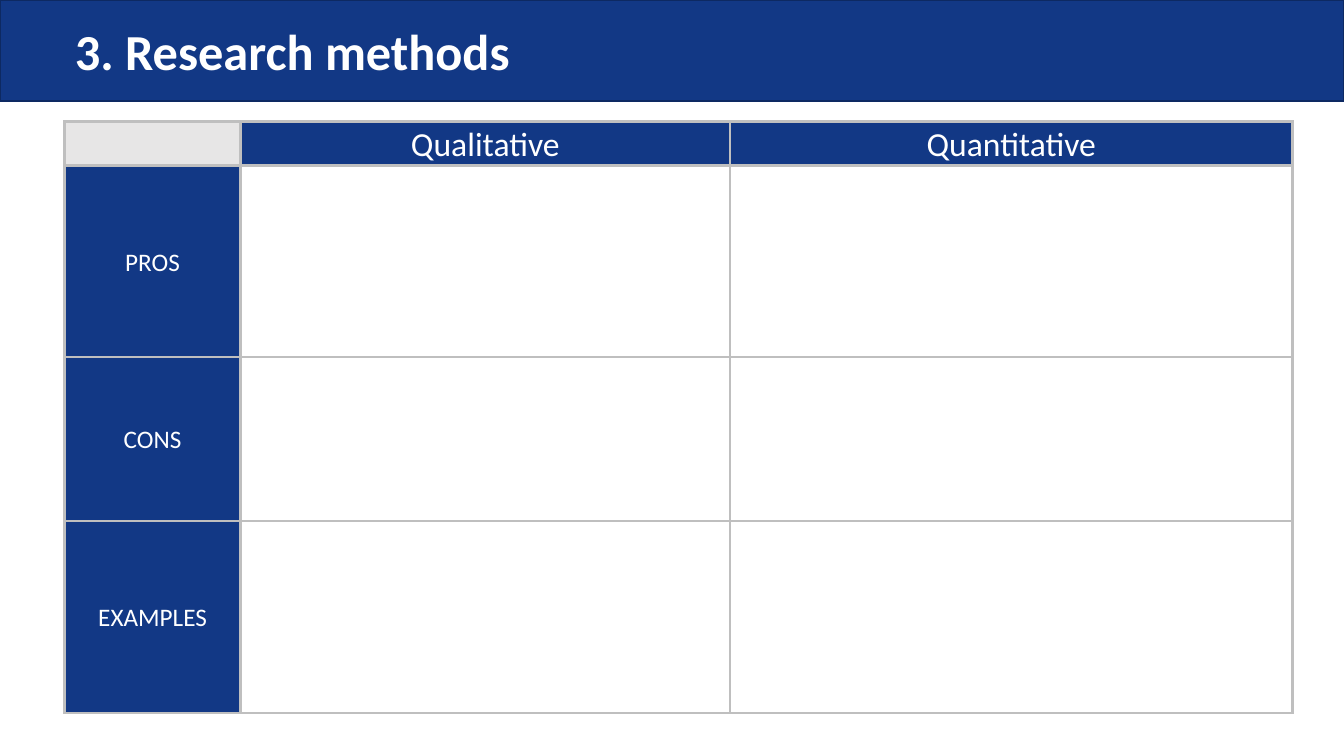
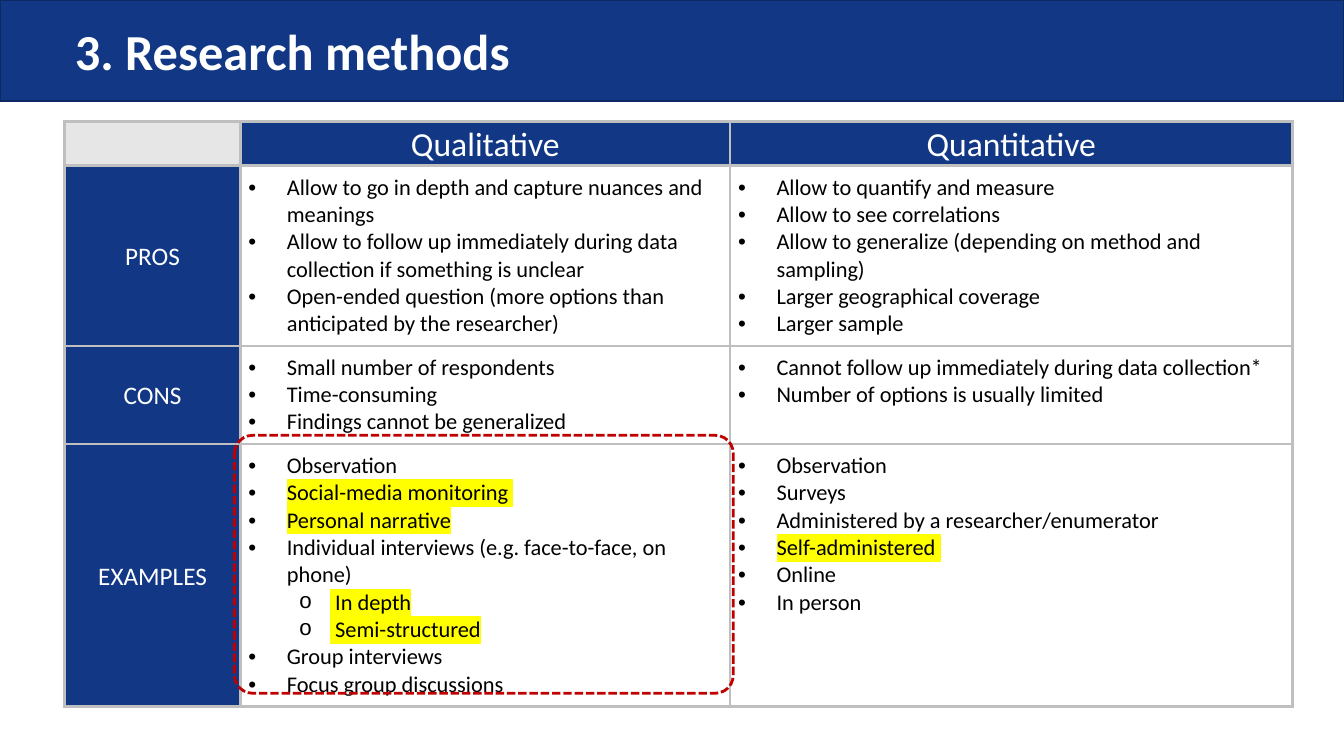
import dataclasses

import lxml.etree
import pptx
import pptx.dml.color
import pptx.enum.dml
import pptx.enum.shapes
import pptx.enum.text
import pptx.oxml
import pptx.oxml.ns
import pptx.presentation
import pptx.shapes.autoshape
import pptx.slide
import pptx.table
import pptx.text.text
import pptx.util

Cm = pptx.util.Cm
Pt = pptx.util.Pt

FONT = "Calibri"
NAVY = "123885"
NAVY_EDGE = "0D2962"
WHITE = "FFFFFF"
BLACK = "000000"
CORNER_GREY = "E7E6E6"
BORDER_GREY = "BFBFBF"
YELLOW = "FFFF00"
RED = "C00000"

TITLE = "3. Research methods"
SLIDE_WIDTH, SLIDE_HEIGHT = 33.87, 19.05
BAND_HEIGHT = 2.55
LEFT, TABLE_TOP = 1.63, 3.07
COLUMN_WIDTHS = (4.43, 12.34, 14.17)
HEADER_HEIGHT = 1.1
HEADINGS = ("Qualitative", "Quantitative")


@dataclasses.dataclass(frozen=True)
class Point:
    text: str
    marked: bool = False
    level: int = 0


@dataclasses.dataclass(frozen=True)
class MethodRow:
    label: str
    height: float
    qualitative: tuple[Point, ...] = ()
    quantitative: tuple[Point, ...] = ()


@dataclasses.dataclass(frozen=True)
class Bullet:
    indent: float
    hanging: float
    mark: str
    font: str


BULLETS = (Bullet(0.97, 0.97, "•", "Arial"), Bullet(2.06, 0.79, "o", "Courier New"))

BLANK_ROWS = (
    MethodRow("PROS", 4.82),
    MethodRow("CONS", 4.13),
    MethodRow("EXAMPLES", 4.84),
)

FILLED_ROWS = (
    MethodRow(
        "PROS",
        4.52,
        (
            Point("Allow to go in depth and capture nuances and meanings"),
            Point("Allow to follow up immediately during data collection if something is unclear"),
            Point("Open-ended question (more options than anticipated by the researcher)"),
        ),
        (
            Point("Allow to quantify and measure"),
            Point("Allow to see correlations"),
            Point("Allow to generalize (depending on method and sampling)"),
            Point("Larger geographical coverage"),
            Point("Larger sample"),
        ),
    ),
    MethodRow(
        "CONS",
        2.46,
        (
            Point("Small number of respondents"),
            Point("Time-consuming"),
            Point("Findings cannot be generalized"),
        ),
        (
            Point("Cannot follow up immediately during data collection*"),
            Point("Number of options is usually limited"),
        ),
    ),
    MethodRow(
        "EXAMPLES",
        6.62,
        (
            Point("Observation"),
            Point("Social-media monitoring ", marked=True),
            Point("Personal narrative", marked=True),
            Point("Individual interviews (e.g. face-to-face, on phone)"),
            Point(" In depth", marked=True, level=1),
            Point(" Semi-structured", marked=True, level=1),
            Point("Group interviews"),
            Point("Focus group discussions"),
        ),
        (
            Point("Observation"),
            Point("Surveys"),
            Point("Administered by a researcher/enumerator"),
            Point("Self-administered ", marked=True),
            Point("Online"),
            Point("In person"),
        ),
    ),
)


def rgb(color: str) -> pptx.dml.color.RGBColor:
    return pptx.dml.color.RGBColor.from_string(color)


def add_xml(parent: lxml.etree.ElementBase, tag: str, **attributes: str) -> lxml.etree.ElementBase:
    child = lxml.etree.SubElement(parent, pptx.oxml.ns.qn(tag))
    for name, value in attributes.items():
        child.set(name, value)
    return child


def style_runs(para: pptx.text.text._Paragraph, size: float, color: str, bold: bool = False) -> None:
    for span in para.runs:
        span.font.name = FONT
        span.font.size = Pt(size)
        span.font.bold = bold
        span.font.color.rgb = rgb(color)


def highlight_runs(para: pptx.text.text._Paragraph) -> None:
    for span in para.runs:
        properties = span.font._element
        mark = add_xml(properties, "a:highlight")
        add_xml(mark, "a:srgbClr", val=YELLOW)
        properties.find(pptx.oxml.ns.qn("a:solidFill")).addnext(mark)


def add_bullet(para: pptx.text.text._Paragraph, level: int) -> None:
    bullet = BULLETS[level]
    para.level = level
    properties = para._p.get_or_add_pPr()
    properties.set("marL", str(Cm(bullet.indent)))
    properties.set("indent", str(-Cm(bullet.hanging)))
    add_xml(properties, "a:buFont", typeface=bullet.font)
    add_xml(properties, "a:buChar", char=bullet.mark)


def format_cell(cell: pptx.table._Cell, color: str) -> None:
    properties = cell._tc.get_or_add_tcPr()
    for side in ("a:lnL", "a:lnR", "a:lnT", "a:lnB"):
        line = add_xml(properties, side, w=str(Pt(2.25)))
        add_xml(add_xml(line, "a:solidFill"), "a:srgbClr", val=BORDER_GREY)
    cell.fill.solid()
    cell.fill.fore_color.rgb = rgb(color)


def fill_label(cell: pptx.table._Cell, text: str, size: float, anchor: pptx.enum.text.MSO_ANCHOR) -> None:
    format_cell(cell, NAVY)
    cell.margin_left = cell.margin_right = Cm(0.13)
    cell.margin_top = cell.margin_bottom = Cm(0)
    cell.vertical_anchor = anchor
    cell.text_frame.text = text
    para = cell.text_frame.paragraphs[0]
    para.alignment = pptx.enum.text.PP_ALIGN.CENTER
    para.line_spacing = 1.07
    para.space_after = Pt(8)
    style_runs(para, size, WHITE)


def fill_points(cell: pptx.table._Cell, points: tuple[Point, ...]) -> None:
    format_cell(cell, WHITE)
    cell.margin_left = cell.margin_right = Cm(0.2)
    cell.margin_top = cell.margin_bottom = Cm(0.2)
    if not points:
        return
    cell.text_frame.text = "\n".join(point.text for point in points)
    for para, point in zip(cell.text_frame.paragraphs, points):
        add_bullet(para, point.level)
        style_runs(para, 16, BLACK)
        if point.marked:
            highlight_runs(para)


def add_box(
    page: pptx.slide.Slide,
    kind: pptx.enum.shapes.MSO_SHAPE,
    place: tuple[float, float, float, float],
    line_color: str,
    line_width: float,
) -> pptx.shapes.autoshape.Shape:
    box = page.shapes.add_shape(kind, *map(Cm, place))
    box.shadow.inherit = False
    box.fill.background()
    box.line.color.rgb = rgb(line_color)
    box.line.width = Pt(line_width)
    return box


def add_band(page: pptx.slide.Slide) -> None:
    place = (0, 0, SLIDE_WIDTH, BAND_HEIGHT)
    band = add_box(page, pptx.enum.shapes.MSO_SHAPE.RECTANGLE, place, NAVY_EDGE, 1)
    band.fill.solid()
    band.fill.fore_color.rgb = rgb(NAVY)
    page.shapes.title.element.addprevious(band.element)


def add_page(deck: pptx.presentation.Presentation) -> pptx.slide.Slide:
    page = deck.slides.add_slide(deck.slide_layouts.get_by_name("Title Only"))
    add_band(page)
    title = page.shapes.title
    title.left, title.top, title.width, title.height = map(Cm, (LEFT, 0.33, 27.28, 2.08))
    frame = title.text_frame
    frame.text = TITLE
    frame.auto_size = pptx.enum.text.MSO_AUTO_SIZE.NONE
    frame.vertical_anchor = pptx.enum.text.MSO_ANCHOR.MIDDLE
    para = frame.paragraphs[0]
    para.alignment = pptx.enum.text.PP_ALIGN.LEFT
    para.line_spacing = 0.9
    style_runs(para, 36, WHITE, bold=True)
    return page


def add_methods_table(page: pptx.slide.Slide, rows: tuple[MethodRow, ...]) -> None:
    heights = (HEADER_HEIGHT, *(row.height for row in rows))
    place = (LEFT, TABLE_TOP, sum(COLUMN_WIDTHS), sum(heights))
    table = page.shapes.add_table(len(heights), len(COLUMN_WIDTHS), *map(Cm, place)).table
    table.first_row = table.horz_banding = False
    for column, width in zip(table.columns, COLUMN_WIDTHS):
        column.width = Cm(width)
    for table_row, height in zip(table.rows, heights):
        table_row.height = Cm(height)
    format_cell(table.cell(0, 0), CORNER_GREY)
    for column_index, heading in enumerate(HEADINGS, 1):
        fill_label(table.cell(0, column_index), heading, 24, pptx.enum.text.MSO_ANCHOR.BOTTOM)
    for row_index, row in enumerate(rows, 1):
        fill_label(table.cell(row_index, 0), row.label, 18, pptx.enum.text.MSO_ANCHOR.MIDDLE)
        fill_points(table.cell(row_index, 1), row.qualitative)
        fill_points(table.cell(row_index, 2), row.quantitative)


def main() -> None:
    deck = pptx.Presentation()
    deck.slide_width, deck.slide_height = Cm(SLIDE_WIDTH), Cm(SLIDE_HEIGHT)

    add_methods_table(add_page(deck), BLANK_ROWS)

    filled_page = add_page(deck)
    add_methods_table(filled_page, FILLED_ROWS)
    place = (5.91, 10.97, 12.57, 6.5)
    frame = add_box(filled_page, pptx.enum.shapes.MSO_SHAPE.ROUNDED_RECTANGLE, place, RED, 2)
    frame.adjustments[0] = 0.07
    frame.line.dash_style = pptx.enum.dml.MSO_LINE.SQUARE_DOT

    deck.save("out.pptx")


if __name__ == "__main__":
    main()
